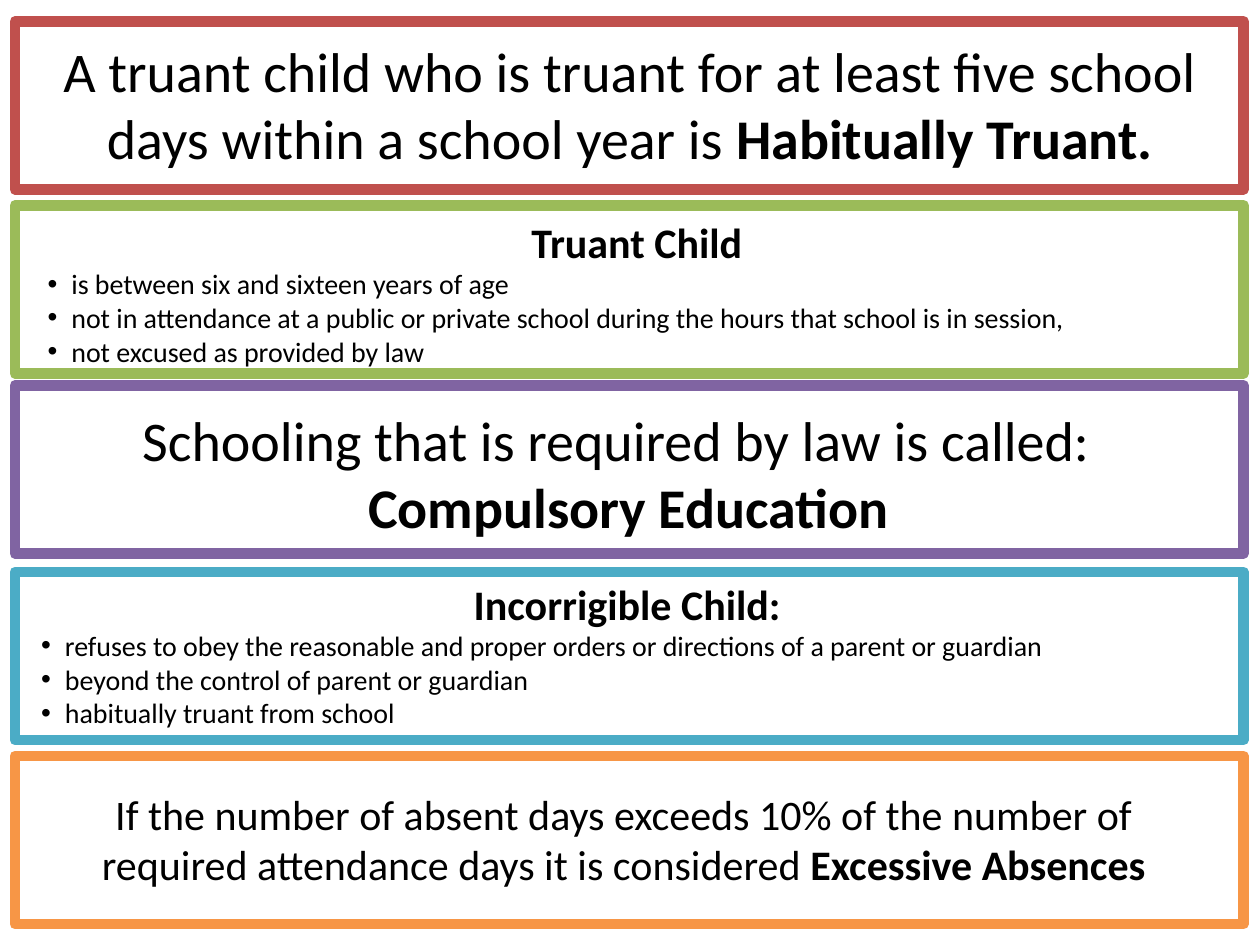
from lxml.etree import SubElement
from pptx import Presentation
from pptx.dml.color import RGBColor
from pptx.enum.shapes import MSO_SHAPE as Shape
from pptx.enum.text import MSO_AUTO_SIZE as AutoSize, PP_ALIGN as Align
from pptx.oxml.ns import qn
from pptx.util import Cm, Pt

FRAMES = [(0.43, "C0504D"), (4.14, "9BBB59"), (7.77, "8064A2"),
          (11.53, "4BACC6"), (15.24, "F79646")]


def rgb(value):
    return RGBColor.from_string(value)


def add_frame(s, top, color):
    sp = s.shapes.add_shape(Shape.RECTANGLE, Cm(0.3), Cm(top), Cm(24.77), Cm(3.39))
    sp.shadow.inherit = False
    sp.fill.solid()
    sp.fill.fore_color.rgb = rgb("FFFFFF")
    sp.line.color.rgb = rgb(color)
    sp.line.width = Pt(6)


def add_text_box(s, left, top, height):
    """Return the text frame of a new wrapping box."""
    tf = s.shapes.add_textbox(Cm(left), Cm(top), Cm(24.13), Cm(height)).text_frame
    tf.word_wrap = True
    tf.auto_size = AutoSize.SHAPE_TO_FIT_TEXT
    return tf


def add_paragraph(tf, align=Align.CENTER, left=0, right=0, hanging=0):
    first = tf.paragraphs[0]
    p = tf.add_paragraph() if first.runs else first
    p.alignment = align
    pPr = p._p.get_or_add_pPr()
    for name, value in (("marL", left), ("marR", right), ("indent", -hanging)):
        pPr.set(name, str(Cm(value)))
    return p


def add_text(p, text, size=16, bold=False, color="000000", font="Calibri"):
    r = p.add_run()
    r.text = text
    r.font.size = Pt(size)
    r.font.bold = bold
    r.font.name = font
    r.font.color.rgb = rgb(color)


def add_bullet(tf, text):
    p = add_paragraph(tf, Align.LEFT, left=0.48, hanging=0.48)
    pPr = p._p.get_or_add_pPr()
    SubElement(pPr, qn("a:buFont")).set("typeface", "Arial")
    SubElement(pPr, qn("a:buChar")).set("char", "•")
    add_text(p, text)


def add_statement(s, left, top, height, size, text, term):
    """A centred sentence that ends in a bold term."""
    p = add_paragraph(add_text_box(s, left, top, height))
    add_text(p, text, size=size)
    add_text(p, term, size=size, bold=True)


def add_definition(s, left, top, term, points, shift=0):
    """A bold heading over bullet points."""
    tf = add_text_box(s, left, top, 3.33)
    add_text(add_paragraph(tf, left=shift), term, size=24, bold=True)
    for point in points:
        add_bullet(tf, point)


def add_question(s, left, top, question, answer):
    tf = add_text_box(s, left, top, 3)
    add_text(add_paragraph(tf, right=0.5), question, size=32)
    add_text(add_paragraph(tf), answer, size=32, bold=True)


def main():
    prs = Presentation()
    prs.slide_width, prs.slide_height = Cm(25.4), Cm(19.05)
    s = prs.slides.add_slide(prs.slide_layouts[6])

    for top, color in FRAMES:
        add_frame(s, top, color)

    add_statement(s, 0.64, 0.61, 3, 32,
                  "A truant child who is truant for at least five school days "
                  "within a school year is ", "Habitually Truant.")
    add_definition(s, 0.71, 4.24, "Truant Child", [
        "is between six and sixteen years of age",
        "not in attendance at a public or private school during the hours "
        "that school is in session,",
        "not excused as provided by law",
    ], shift=0.13)
    add_question(s, 0.61, 8.05, "Schooling that is required by law is called:",
                 "Compulsory Education")
    add_definition(s, 0.58, 11.53, "Incorrigible Child:", [
        "refuses to obey the reasonable and proper orders or directions "
        "of a parent or guardian",
        "beyond the control of parent or guardian",
        "habitually truant from school",
    ])
    add_statement(s, 0.51, 15.77, 2.31, 24,
                  "If the number of absent days exceeds 10% of the number of "
                  "required attendance days it is considered ",
                  "Excessive Absences")
    prs.save("out.pptx")


if __name__ == "__main__":
    main()
